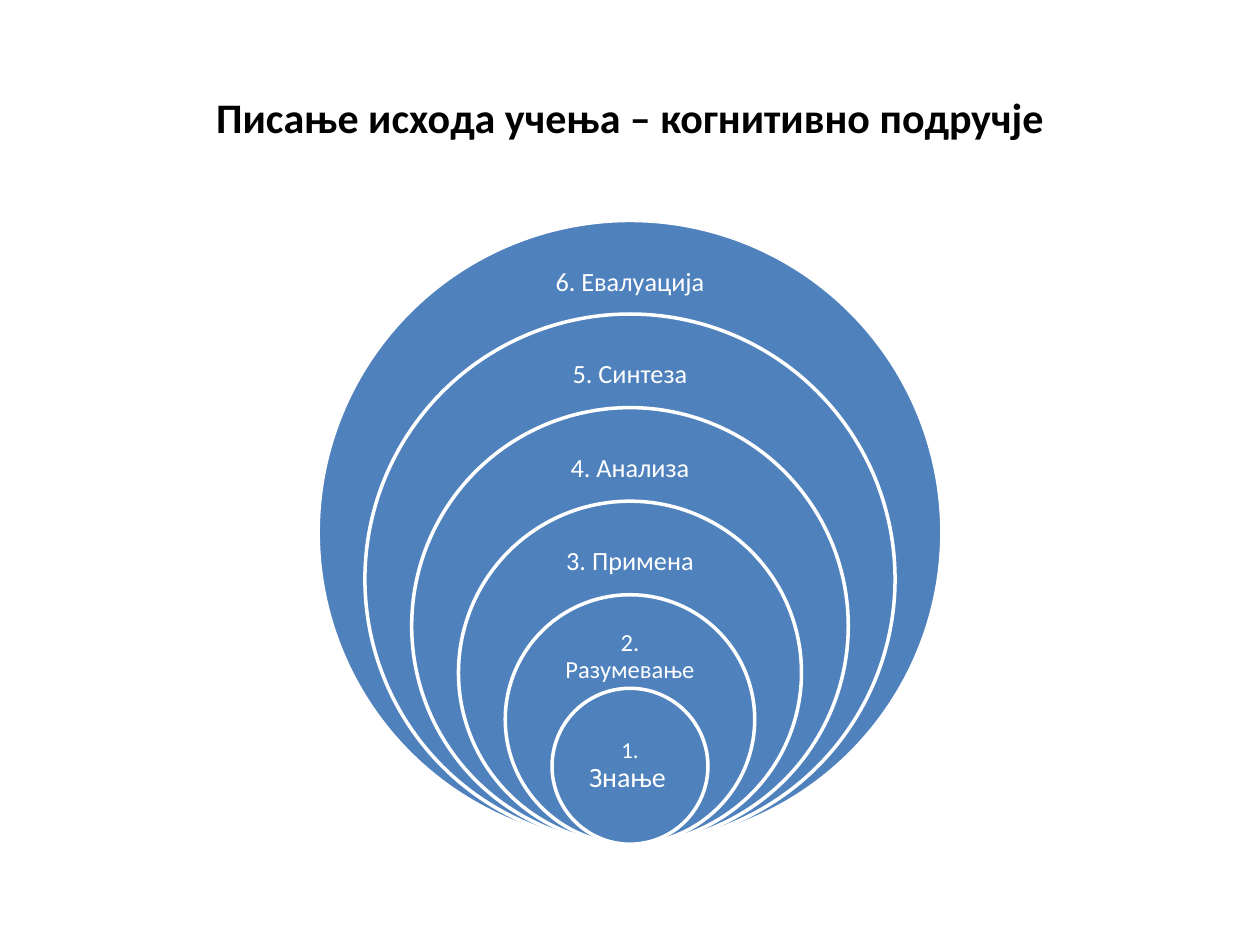
import pptx
import pptx.util
import pptx.dml.color
import pptx.enum.shapes
import pptx.enum.text

Pt = pptx.util.Pt
CENTER = pptx.enum.text.PP_ALIGN.CENTER
MIDDLE = pptx.enum.text.MSO_ANCHOR.MIDDLE

TITLE = "Писање исхода учења – когнитивно подручје"

# Outermost first: text runs with sizes, label width, label height,
# label distance below the circle's top, label inset
LEVELS = [
    ([("6. Евалуација", 15)], 134, 35, 18, 8.4),
    ([("5. Синтеза", 15)], 130.5, 35, 17.5, 8.4),
    ([("4. Анализа", 15)], 129, 35, 17.5, 8.4),
    ([("3. Примена", 15)], 106, 35, 17.5, 8.4),
    ([("2. Разумевање", 14)], 93, 35, 18, 7.8),
    ([("1. ", 13), ("Знање", 16), (" ", 13)], 62.5, 44.5, 22.3, 7.2),
]

CENTER_X = 360
BOTTOM = 482.4
OUTER_DIAMETER = 356.4
DIAMETER_STEP = 0.15 * OUTER_DIAMETER


def rgb(hex_color):
    return pptx.dml.color.RGBColor.from_string(hex_color)


def add_circle(shapes, diameter):
    circle = shapes.add_shape(
        pptx.enum.shapes.MSO_SHAPE.OVAL,
        Pt(CENTER_X - diameter / 2), Pt(BOTTOM - diameter),
        Pt(diameter), Pt(diameter))
    circle.shadow.inherit = False
    circle.fill.solid()
    circle.fill.fore_color.rgb = rgb("4F81BD")
    circle.line.color.rgb = rgb("FFFFFF")
    circle.line.width = Pt(2)


def add_label(shapes, runs, top, width, height, inset):
    label = shapes.add_textbox(
        Pt(CENTER_X - width / 2), Pt(top), Pt(width), Pt(height))
    frame = label.text_frame
    frame.word_wrap = True
    frame.vertical_anchor = MIDDLE
    frame.margin_left = frame.margin_right = Pt(inset)
    frame.margin_top = frame.margin_bottom = Pt(inset)
    paragraph = frame.paragraphs[0]
    paragraph.alignment = CENTER
    paragraph.line_spacing = 0.9
    paragraph.font.name = "Calibri"
    for text, size in runs:
        run = paragraph.add_run()
        run.text = text
        run.font.size = Pt(size)
        run.font.color.rgb = rgb("FFFFFF")


def main():
    presentation = pptx.Presentation()
    presentation.slide_width = Pt(720)
    presentation.slide_height = Pt(540)
    slide = presentation.slides.add_slide(presentation.slide_layouts[5])

    title = slide.shapes.title
    title.left, title.top = Pt(36), Pt(21.6)
    title.width, title.height = Pt(648), Pt(90)
    title.text_frame.text = TITLE
    title.text_frame.vertical_anchor = MIDDLE
    heading = title.text_frame.paragraphs[0]
    heading.alignment = CENTER
    heading.font.name = "Calibri"
    heading.font.size = Pt(24)
    heading.font.bold = True
    heading.font.color.rgb = rgb("000000")

    diagram = slide.shapes.add_group_shape().shapes
    for index, (runs, width, height, offset, inset) in enumerate(LEVELS):
        diameter = OUTER_DIAMETER - index * DIAMETER_STEP
        add_circle(diagram, diameter)
        add_label(diagram, runs, BOTTOM - diameter + offset, width, height, inset)

    presentation.save("out.pptx")


if __name__ == "__main__":
    main()
